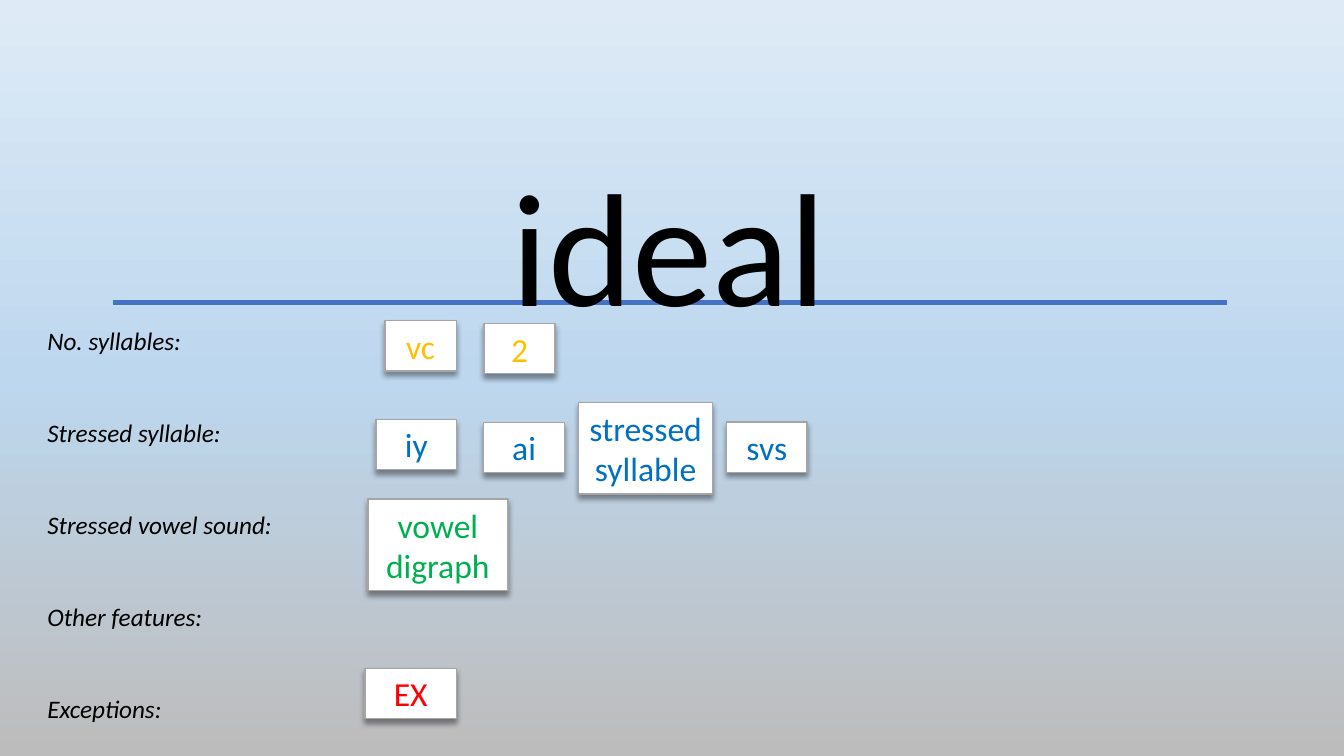
from copy import deepcopy
from lxml import etree
from pptx import Presentation
from pptx import util as u
from pptx.dml.color import RGBColor
from pptx.enum import shapes, text
from pptx.oxml import ns

Pt = u.Pt
FONT = "Calibri"
BLACK = RGBColor(0, 0, 0)
WHITE = RGBColor(0xFF, 0xFF, 0xFF)
GRAY = RGBColor(0xA5, 0xA5, 0xA5)
RULE = RGBColor(0x44, 0x72, 0xC4)
GOLD = RGBColor(0xFF, 0xC0, 0x00)
BLUE = RGBColor(0x00, 0x70, 0xC0)
GREEN = RGBColor(0x00, 0xB0, 0x50)
RED = RGBColor(0xFF, 0, 0)
SKY = [RGBColor(0xDE, 0xEB, 0xF7), RGBColor(0xBD, 0xD7, 0xEE), RGBColor(0xBD, 0xBC, 0xBC)]

LABELS = ["No. syllables:", "Stressed syllable:", "Stressed vowel sound:",
          "Other features:", "Exceptions:"]
CARDS = [
    (["vc"], 275, 229, 51, GOLD),
    (["2"], 345.6, 231, 51, GOLD),
    (["iy"], 268.6, 299.5, 57.6, BLUE),
    (["ai"], 345.6, 301.7, 57.6, BLUE),
    (["stressed", "syllable"], 413.3, 287.3, 95.8, BLUE),
    (["svs"], 519, 301.5, 57.6, BLUE),
    (["vowel", "digraph"], 262.8, 356.4, 100, GREEN),
    (["EX"], 260.6, 477.4, 65.5, RED),
]


def place(shape, x, y, w, h):
    """Move a shape into the given box."""
    shape.left, shape.top, shape.width, shape.height = Pt(x), Pt(y), Pt(w), Pt(h)


def write(frame, lines, size, color, align, gap=0, slant=False):
    """Write one paragraph per line, with a gap between them."""
    for i, line in enumerate(lines):
        para = frame.add_paragraph() if i else frame.paragraphs[0]
        para.alignment = align
        para.line_spacing = 1.0
        para.space_before = Pt(gap if i else 0)
        run = para.add_run()
        run.text = line
        font = run.font
        font.name, font.size, font.italic = FONT, Pt(size), slant
        font.color.rgb = color


def effects(shape):
    """Give a shape an empty effect list and return it."""
    return etree.SubElement(shape.element.spPr, ns.qn("a:effectLst"))


def sky(page):
    """Fill the background with a vertical gradient of three stops."""
    fill = page.background.fill
    fill.gradient()
    fill.gradient_angle = 270
    first = page.element.xpath(".//p:bg//a:gs")[0]
    first.addnext(deepcopy(first))
    for i, (stop, color) in enumerate(zip(fill.gradient_stops, SKY)):
        stop.position = i / 2
        stop.color.rgb = color


def heading(page, word, x, y, w, h):
    """Set the large word over a rule that runs past its box."""
    title = page.shapes.title
    place(title, x, y, w, h)
    frame = title.text_frame
    frame.auto_size = text.MSO_AUTO_SIZE.SHAPE_TO_FIT_TEXT
    frame.vertical_anchor = text.MSO_ANCHOR.TOP
    write(frame, [word], 115, BLACK, text.PP_ALIGN.CENTER)
    base = Pt(y + 116)
    rule = page.shapes.add_connector(
        shapes.MSO_CONNECTOR.STRAIGHT, Pt(x - 43), base, Pt(x + w + 44.5), base)
    rule.line.color.rgb = RULE
    rule.line.width = Pt(3)
    effects(rule)
    title.element.addprevious(rule.element)


def labels(page, x, y, w, h):
    """List the labels evenly down the box."""
    body = page.placeholders[1]
    place(body, x, y, w, h)
    frame = body.text_frame
    frame.auto_size = text.MSO_AUTO_SIZE.NONE
    write(frame, LABELS, 18, BLACK, text.PP_ALIGN.LEFT, 44, True)
    for para in frame.paragraphs:
        props = para._p.get_or_add_pPr()
        props.set("marL", "0")
        props.set("indent", "0")
        etree.SubElement(props, ns.qn("a:buNone"))


def card(page, lines, x, y, w, color):
    """Add a white card, as tall as its lines, with a soft shadow."""
    box = page.shapes.add_shape(
        shapes.MSO_SHAPE.RECTANGLE, Pt(x), Pt(y), Pt(w), Pt(6.5 + 29.5 * len(lines)))
    box.fill.solid()
    box.fill.fore_color.rgb = WHITE
    box.line.color.rgb = GRAY
    box.line.width = Pt(1)
    shade = etree.SubElement(
        effects(box), ns.qn("a:outerShdw"), blurRad=str(Pt(4)), dist=str(Pt(3)),
        dir="5400000", algn="t", rotWithShape="0")
    tint = etree.SubElement(shade, ns.qn("a:srgbClr"), val=str(BLACK))
    etree.SubElement(tint, ns.qn("a:alpha"), val="40000")
    frame = box.text_frame
    frame.word_wrap = False
    frame.vertical_anchor = text.MSO_ANCHOR.MIDDLE
    write(frame, lines, 24, color, text.PP_ALIGN.CENTER)


def main():
    """Build the word slide."""
    deck = Presentation()
    deck.slide_width, deck.slide_height = Pt(960), Pt(540)
    page = deck.slides.add_slide(deck.slide_layouts[1])
    sky(page)
    heading(page, "ideal", 124, 100, 708, 147)
    labels(page, 26.6, 229, 176.4, 291)
    for item in CARDS:
        card(page, *item)
    deck.save("out.pptx")


if __name__ == "__main__":
    main()
